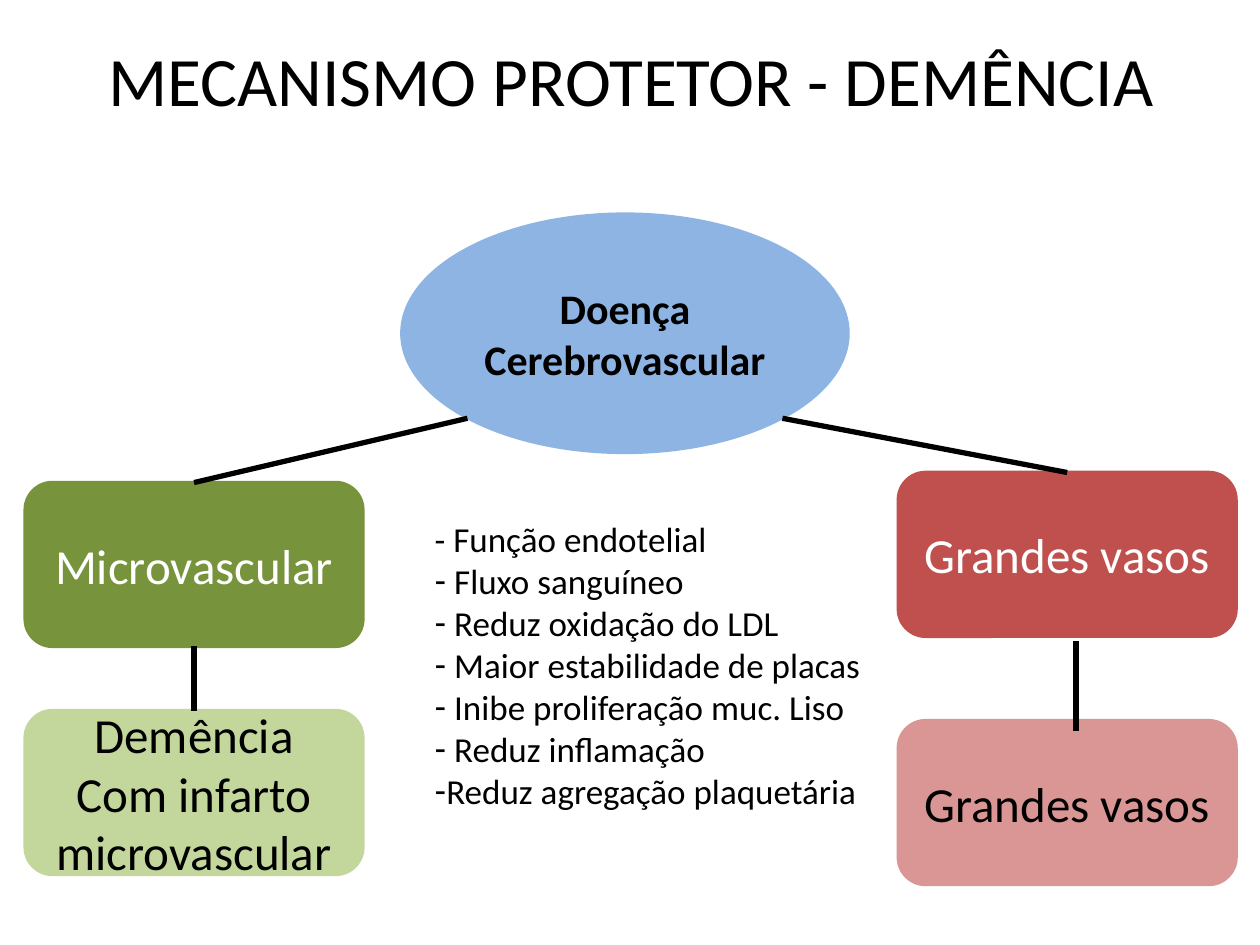
from dataclasses import dataclass
from typing import Optional

from lxml import etree
from pptx import Presentation
from pptx.dml.color import RGBColor
from pptx.enum import shapes, text
from pptx.oxml.ns import qn
from pptx.util import Inches, Pt


@dataclass(frozen=True)
class Theme:
    font: str = "Calibri"
    black: str = "000000"
    white: str = "FFFFFF"
    blue: str = "8EB4E3"
    green: str = "77933C"
    light_green: str = "C3D69B"
    red: str = "C0504D"
    light_red: str = "D99694"
    title_size: float = 39.6
    cause_size: float = 24
    box_size: float = 28
    list_size: float = 20
    border: float = 2
    link: float = 3


@dataclass(frozen=True)
class Node:
    label: str
    left: float
    top: float
    fill: str
    color: str
    width: float = 2.68
    height: float = 1.3
    size: float = Theme.box_size
    bold: bool = False
    kind: shapes.MSO_SHAPE = shapes.MSO_SHAPE.ROUNDED_RECTANGLE


@dataclass(frozen=True)
class Link:
    start: tuple[float, float]
    end: tuple[float, float]
    source: Optional[str] = None  # box left from its bottom side
    target: Optional[str] = None  # box entered at its top side


T = Theme()
LEFT_COL, RIGHT_COL = 0.2, 7.13

NODES = {
    "cause": Node("Doença Cerebrovascular", 3.19, 1.7, T.blue, T.black, 3.54, 1.89,
                  T.cause_size, True, shapes.MSO_SHAPE.OVAL),
    "micro": Node("Microvascular", LEFT_COL, 3.83, T.green, T.white),
    "large": Node("Grandes vasos", RIGHT_COL, 3.75, T.red, T.white),
    "dementia": Node("Demência\nCom infarto microvascular", LEFT_COL, 5.64,
                     T.light_green, T.black),
    "large_result": Node("Grandes vasos", RIGHT_COL, 5.72, T.light_red, T.black),
}

LINKS = [
    Link((3.71, 3.32), (1.54, 3.83), target="micro"),
    Link((6.21, 3.32), (8.47, 3.75), target="large"),
    Link((1.54, 5.13), (1.54, 5.64), source="micro", target="dementia"),
    Link((8.54, 5.09), (8.54, 5.8)),
]

MECHANISMS = [
    "- Função endotelial",
    " Fluxo sanguíneo",
    " Reduz oxidação do LDL",
    " Maior estabilidade de placas",
    " Inibe proliferação muc. Liso",
    " Reduz inflamação",
    "Reduz agregação plaquetária",
]


def place(sp, left: float, top: float, width: float, height: float) -> None:
    sp.left, sp.top = Inches(left), Inches(top)
    sp.width, sp.height = Inches(width), Inches(height)


def format_text(tf, size: float, color: str, align: text.PP_ALIGN,
                bold: bool = False) -> None:
    tf.word_wrap = True
    for p in tf.paragraphs:
        p.alignment = align
        for r in p.runs:
            r.font.name = T.font
            r.font.size = Pt(size)
            r.font.bold = bold
            r.font.color.rgb = RGBColor.from_string(color)


def set_bullet(p, char: Optional[str]) -> None:
    """Give the paragraph a flush-left bullet, or none."""
    pPr = p._p.get_or_add_pPr()
    pPr.set("marL", "0")
    pPr.set("indent", "0")
    if char:
        etree.SubElement(pPr, qn("a:buChar")).set("char", char)
    else:
        etree.SubElement(pPr, qn("a:buNone"))


def add_node(s, node: Node):
    sp = s.shapes.add_shape(node.kind, Inches(node.left), Inches(node.top),
                            Inches(node.width), Inches(node.height))
    sp.shadow.inherit = False
    color = RGBColor.from_string(node.fill)
    sp.fill.solid()
    sp.fill.fore_color.rgb = color
    sp.line.color.rgb = color
    sp.line.width = Pt(T.border)
    tf = sp.text_frame
    tf.text = node.label
    tf.vertical_anchor = text.MSO_ANCHOR.MIDDLE
    format_text(tf, node.size, node.color, text.PP_ALIGN.CENTER, node.bold)
    return sp


def add_link(s, link: Link, boxes: dict) -> None:
    cx = s.shapes.add_connector(shapes.MSO_CONNECTOR.STRAIGHT,
                                *map(Inches, link.start + link.end))
    if link.source:
        cx.begin_connect(boxes[link.source], 2)
    if link.target:
        cx.end_connect(boxes[link.target], 0)
    cx.line.color.rgb = RGBColor.from_string(T.black)
    cx.line.width = Pt(T.link)
    etree.SubElement(cx._element.spPr, qn("a:effectLst"))


def main() -> None:
    prs = Presentation()
    prs.slide_width, prs.slide_height = Inches(10), Inches(7.5)
    s = prs.slides.add_slide(prs.slide_layouts[1])

    # Title
    title = s.shapes.title
    place(title, 0.51, 0, 9, 1.25)
    title.text_frame.text = "MECANISMO PROTETOR - DEMÊNCIA"
    title.text_frame.auto_size = text.MSO_AUTO_SIZE.NONE
    title.text_frame.vertical_anchor = text.MSO_ANCHOR.MIDDLE
    format_text(title.text_frame, T.title_size, T.black, text.PP_ALIGN.CENTER)

    # Diagram
    boxes = {name: add_node(s, node) for name, node in NODES.items()}
    for link in LINKS:
        add_link(s, link, boxes)

    # List of protective mechanisms
    body = s.placeholders[1]
    place(body, 3.35, 4.06, 3.84, 2.46)
    tf = body.text_frame
    tf.text = "\n".join(MECHANISMS)
    tf.auto_size = text.MSO_AUTO_SIZE.SHAPE_TO_FIT_TEXT
    format_text(tf, T.list_size, T.black, text.PP_ALIGN.LEFT)
    for i, p in enumerate(tf.paragraphs):
        p.space_before = Pt(0)
        set_bullet(p, "-" if i else None)

    prs.save("out.pptx")


if __name__ == "__main__":
    main()
